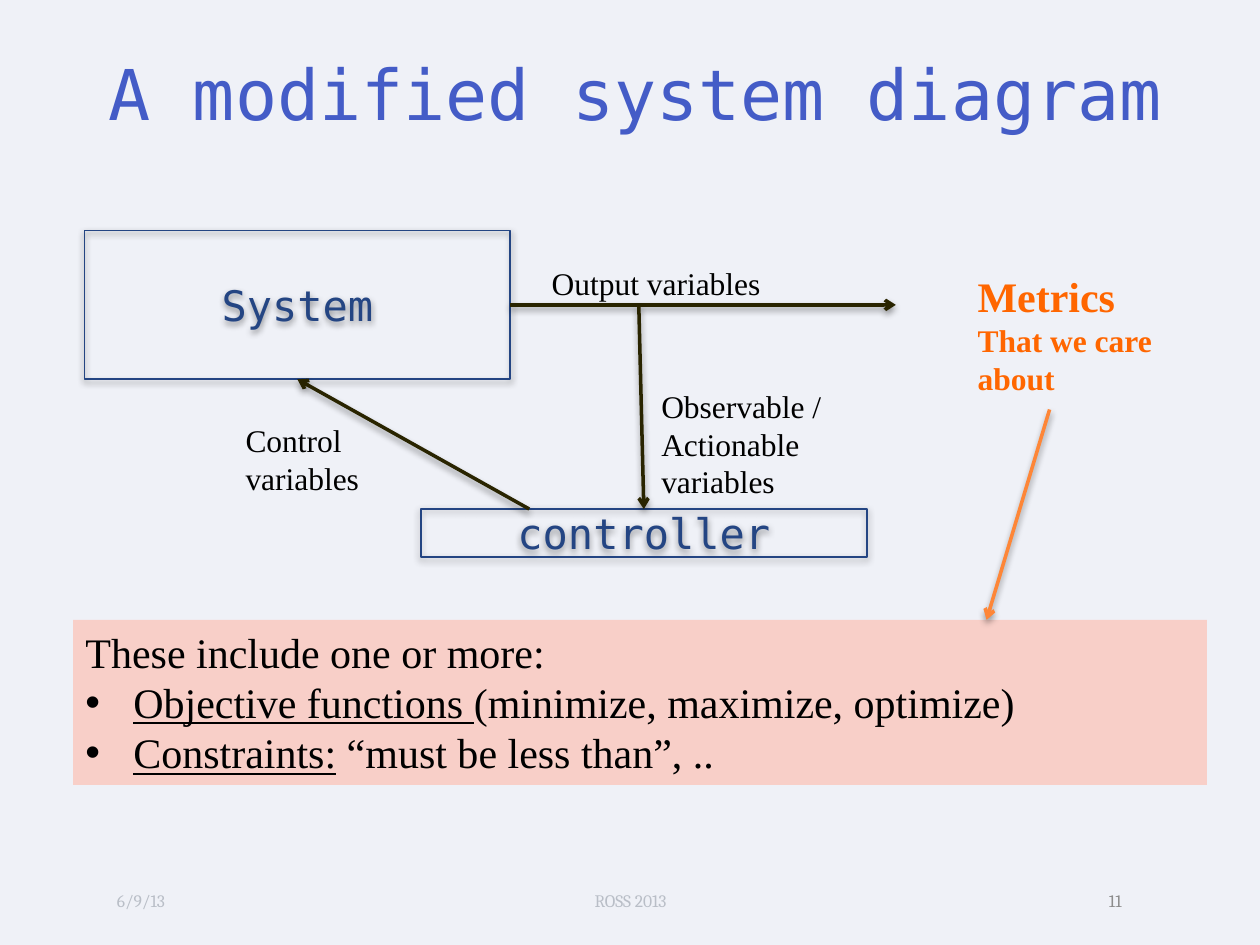
"""Builds a slide with a modified system diagram and its metrics."""
import pptx
import pptx.dml.color
import pptx.enum.shapes
import pptx.enum.text
import pptx.oxml
import pptx.oxml.ns
import pptx.util

Inches = pptx.util.Inches
Pt = pptx.util.Pt
ALIGN = pptx.enum.text.PP_ALIGN
ANCHOR = pptx.enum.text.MSO_ANCHOR
MONO, SERIF, FOOTER = "DejaVu Sans Mono", "Times New Roman", "Cambria"
NAVY, OLIVE, ORANGE = "244583", "292400", "FE8637"
TOP, BOTTOM, RIGHT = 0, 2, 3


def color(hex_string):
    return pptx.dml.color.RGBColor.from_string(hex_string)


def element(tag, content="", **attributes):
    values = "".join(f' {key}="{value}"' for key, value in attributes.items())
    namespace = pptx.oxml.ns.nsdecls("a")
    return pptx.oxml.parse_xml(f"<a:{tag} {namespace}{values}>{content}</a:{tag}>")


def drop_shadow(opacity, distance):
    tint = f'<a:srgbClr val="000000"><a:alpha val="{opacity * 1000}"/></a:srgbClr>'
    return element("outerShdw", tint, blurRad=Pt(4), dist=Pt(distance),
                   dir=90 * 60000, rotWithShape=0)


class DiagramSlide:
    def __init__(self, presentation, background):
        self.slide = presentation.slides.add_slide(presentation.slide_layouts[6])
        self.slide.background.fill.solid()
        self.slide.background.fill.fore_color.rgb = color(background)

    def style(self, paragraph, size, font, ink, align=ALIGN.LEFT, bold=False):
        paragraph.alignment = align
        paragraph.font.size = Pt(size)
        paragraph.font.name = font
        paragraph.font.color.rgb = color(ink)
        paragraph.font.bold = bold

    def text(self, place, lines, font=SERIF, ink="000000", align=ALIGN.LEFT,
             anchor=ANCHOR.TOP, bold=False):
        frame = self.slide.shapes.add_textbox(*map(Inches, place)).text_frame
        frame.word_wrap = True
        frame.vertical_anchor = anchor
        for index, (words, size) in enumerate(lines):
            paragraph = frame.add_paragraph() if index else frame.paragraphs[0]
            paragraph.add_run().text = words
            self.style(paragraph, size, font, ink, align, bold)

    def rectangle(self, place):
        kind = pptx.enum.shapes.MSO_SHAPE.RECTANGLE
        shape = self.slide.shapes.add_shape(kind, *map(Inches, place))
        shape.shadow.inherit = False
        shape.text_frame.word_wrap = True
        shape.text_frame.vertical_anchor = ANCHOR.MIDDLE
        return shape

    def block(self, place, label):
        shape = self.rectangle(place)
        shape.fill.background()
        shape.line.color.rgb = color(NAVY)
        shape.line.width = Pt(1)
        effects = shape._element.spPr.find(pptx.oxml.ns.qn("a:effectLst"))
        effects.append(drop_shadow(42, 1.6))
        paragraph = shape.text_frame.paragraphs[0]
        paragraph.add_run().text = label
        self.style(paragraph, 24, MONO, NAVY, ALIGN.CENTER)
        return shape

    def panel(self, place, fill, heading, bullets):
        shape = self.rectangle(place)
        shape.fill.solid()
        shape.fill.fore_color.rgb = color(fill)
        shape.line.fill.background()
        frame = shape.text_frame
        frame.vertical_anchor = ANCHOR.TOP
        frame.paragraphs[0].add_run().text = heading
        self.style(frame.paragraphs[0], 24, SERIF, "000000")
        for term, explanation in bullets:
            paragraph = frame.add_paragraph()
            properties = paragraph._p.get_or_add_pPr()
            properties.set("marL", str(Inches(0.38)))
            properties.set("indent", str(-Inches(0.38)))
            properties.append(element("buFont", typeface="Arial"))
            properties.append(element("buChar", char="•"))
            underlined = paragraph.add_run()
            underlined.text = term
            underlined.font.underline = True
            paragraph.add_run().text = explanation
            self.style(paragraph, 24, SERIF, "000000")

    def arrow(self, start, end, ink=OLIVE, source=None, target=None):
        kind = pptx.enum.shapes.MSO_CONNECTOR.STRAIGHT
        connector = self.slide.shapes.add_connector(kind, *map(Inches, start + end))
        connector.line.color.rgb = color(ink)
        connector.line.width = Pt(2)
        properties = connector._element.spPr
        outline = properties.find(pptx.oxml.ns.qn("a:ln"))
        outline.append(element("tailEnd", type="arrow"))
        effects = element("effectLst")
        effects.append(drop_shadow(40, 2))
        properties.append(effects)
        if source:
            connector.begin_connect(*source)
        if target:
            connector.end_connect(*target)


def main():
    presentation = pptx.Presentation()
    presentation.slide_width = Inches(10)
    presentation.slide_height = Inches(7.5)
    page = DiagramSlide(presentation, "EFF1F7")

    page.text((0.5, 0.3, 9.08, 0.87), [("A modified system diagram", 40)],
              MONO, "445CC7", ALIGN.CENTER, ANCHOR.MIDDLE)
    for left, width, words, ink, align in (
        (0.83, 2, "6/9/13", "B9BEC7", ALIGN.LEFT),
        (3.42, 3.17, "ROSS 2013", "B9BEC7", ALIGN.CENTER),
        (7.17, 1.83, "11", "8C8C8C", ALIGN.RIGHT),
    ):
        page.text((left, 6.95, width, 0.4), [(words, 10)], FOOTER, ink, align,
                  ANCHOR.MIDDLE)

    system = page.block((0.67, 1.83, 3.38, 1.18), "System")
    controller = page.block((3.34, 4.04, 3.54, 0.38), "controller")
    page.arrow((4.05, 2.42), (7.11, 2.42), source=(system, RIGHT))
    page.arrow((5.07, 2.42), (5.11, 4.04), target=(controller, TOP))
    page.arrow((4.2, 4.04), (2.36, 3.01), target=(system, BOTTOM))

    for place, label in (
        ((4.28, 2.05, 2.36, 0.4), "Output variables"),
        ((5.15, 3.02, 2.04, 1.01), "Observable / Actionable variables"),
        ((1.85, 3.29, 1.49, 0.71), "Control variables"),
    ):
        page.text(place, [(label, 18)])
    page.text((7.66, 2.1, 1.59, 1.11), [("Metrics", 24), ("That we care about", 18)],
              ink="FF6600", bold=True)

    page.panel((0.58, 4.92, 9, 1.31), "F8CFC8", "These include one or more:", (
        ("Objective functions ", "(minimize, maximize, optimize)"),
        ("Constraints:", " “must be less than”, .."),
    ))
    page.arrow((8.33, 3.25), (7.83, 4.92), ORANGE)
    presentation.save("out.pptx")


if __name__ == "__main__":
    main()
